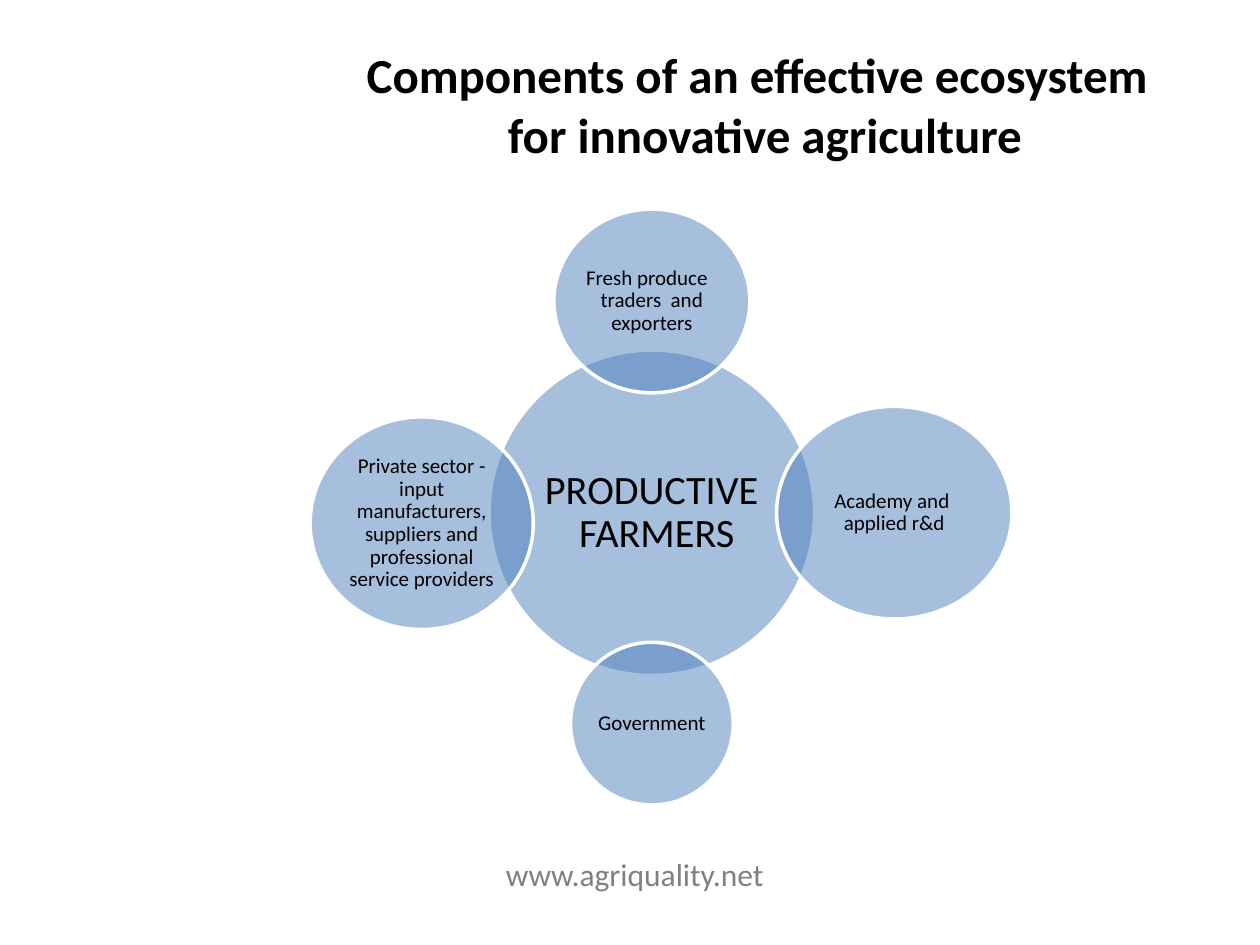
import pptx
import pptx.util
import pptx.dml.color
import pptx.enum.shapes
import pptx.enum.text
import pptx.oxml.ns
from lxml import etree

Pt = pptx.util.Pt
HUES = {"ink": "000000", "disc": "4F81BD", "rim": "FFFFFF", "foot": "808080"}


class Deck:
    font = "Calibri"

    def __init__(self):
        self.prs = pptx.Presentation()
        self.prs.slide_width, self.prs.slide_height = Pt(720), Pt(540)
        self.slide = self.prs.slides.add_slide(self.prs.slide_layouts[5])

    def hue(self, name):
        return pptx.dml.color.RGBColor.from_string(HUES[name])

    def put(self, frame, runs, hue="ink", bold=False, space=1.0):
        """Fill a frame with one centred right-to-left paragraph."""
        frame.word_wrap = True
        para = frame.paragraphs[0]
        para.alignment = pptx.enum.text.PP_ALIGN.CENTER
        para.line_spacing = space
        para._p.get_or_add_pPr().set("rtl", "1")
        for text, size in runs:
            run = para.add_run()
            run.text = text
            run.font.name = self.font
            run.font.size = Pt(size)
            run.font.bold = bold
            run.font.color.rgb = self.hue(hue)

    def title(self, box, runs):
        shape = self.slide.shapes.title
        shape.left, shape.top, shape.width, shape.height = map(Pt, box)
        frame = shape.text_frame
        frame.auto_size = pptx.enum.text.MSO_AUTO_SIZE.NONE
        frame.vertical_anchor = pptx.enum.text.MSO_ANCHOR.TOP
        frame.margin_top = 0
        self.put(frame, runs, bold=True)

    def label(self, box, text, size, hue):
        shape = self.slide.shapes.add_textbox(*map(Pt, box))
        self.put(shape.text_frame, [(text, size)], hue)

    def disc(self, mid, wide, high, text, size):
        """Half-clear ellipse around a centre point."""
        x, y = mid
        shape = self.slide.shapes.add_shape(
            pptx.enum.shapes.MSO_SHAPE.OVAL,
            Pt(x - wide / 2), Pt(y - high / 2), Pt(wide), Pt(high))
        shape.shadow.inherit = False
        shape.fill.solid()
        shape.fill.fore_color.rgb = self.hue("disc")
        tint = shape.fill._xPr.find(".//" + pptx.oxml.ns.qn("a:srgbClr"))
        etree.SubElement(tint, pptx.oxml.ns.qn("a:alpha"), val="50000")
        shape.line.color.rgb = self.hue("rim")
        shape.line.width = Pt(2)
        frame = shape.text_frame
        frame.vertical_anchor = pptx.enum.text.MSO_ANCHOR.MIDDLE
        frame.margin_left = frame.margin_right = Pt(1.2)
        frame.margin_top = frame.margin_bottom = Pt(1.2)
        self.put(frame, [(text, size)], space=0.9)


def main():
    deck = Deck()

    # Web address and title
    deck.label((247, 485, 227, 51), "www.agriquality.net ", 18, "foot")
    deck.title((190, 21.5, 494, 90), [
        (" ", 32),
        ("Components of an effective ecosystem for innovative agriculture", 28)])

    # Farmers in the middle, partners around them
    x, y = 372.5, 293
    discs = [
        ((x, y), 186, 186, "PRODUCTIVE FARMERS ", 23),
        ((x, 172), 112, 105, " Fresh produce  traders  and exporters", 12),
        ((511, y), 134.5, 121.5, "Academy and  applied r&d", 12),
        ((x, 413.5), 93, 93, "Government", 12),
        ((241, 299), 127.5, 121.5, "Private sector - input manufacturers, "
         "suppliers and professional service providers", 12),
    ]
    for item in discs:
        deck.disc(*item)

    deck.prs.save("out.pptx")


if __name__ == "__main__":
    main()
